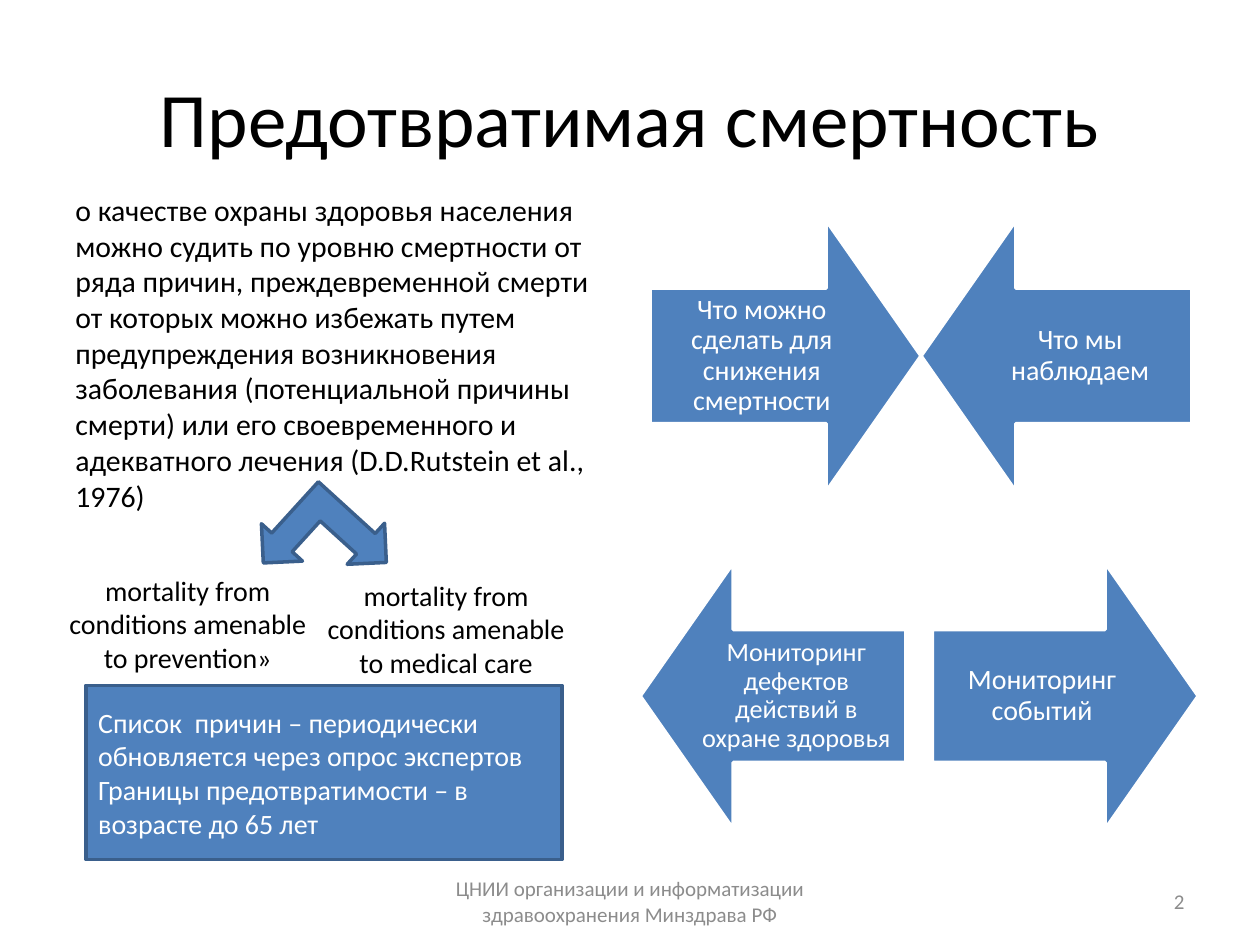
from pptx import Presentation
from pptx.dml.color import RGBColor
from pptx.enum.shapes import MSO_SHAPE as Shape
from pptx.enum.text import MSO_ANCHOR as Anchor, PP_ALIGN as Align
from pptx.util import Pt

COLORS = {
    "black": "000000",
    "white": "FFFFFF",
    "blue": "4F81BD",
    "outline": "3A5F8C",
    "gray": "8C8C8C",
}
FONT = "Calibri"
DEFINITION = (
    "о качестве охраны здоровья населения можно судить по уровню смертности "
    "от ряда причин, преждевременной смерти от которых можно избежать путем "
    "предупреждения возникновения заболевания (потенциальной причины смерти) "
    "или его своевременного и адекватного лечения (D.D.Rutstein et al., 1976)"
)


def color(name):
    return RGBColor.from_string(COLORS[name])


def write(box, text, size, ink="black", align=Align.LEFT, anchor=Anchor.TOP):
    frame = box.text_frame
    frame.text = text
    frame.word_wrap = True
    frame.vertical_anchor = anchor
    for para in frame.paragraphs:
        para.alignment = align
        for span in para.runs:
            span.font.name = FONT
            span.font.size = Pt(size)
            span.font.color.rgb = color(ink)


def add_title(page, text):
    title = page.shapes.title
    title.left, title.top, title.width, title.height = Pt(36), Pt(21.6), Pt(648), Pt(90)
    write(title, text, 44, align=Align.CENTER, anchor=Anchor.MIDDLE)


def add_text(page, bounds, text, size, **style):
    box = page.shapes.add_textbox(*map(Pt, bounds))
    write(box, text, size, **style)


def add_block(page, kind, bounds, outline="outline"):
    block = page.shapes.add_shape(kind, *map(Pt, bounds))
    block.shadow.inherit = False
    block.fill.solid()
    block.fill.fore_color.rgb = color("blue")
    block.line.color.rgb = color(outline)
    block.line.width = Pt(2)
    return block


def add_arrow(page, kind, left, top, side, text, size):
    arrow = add_block(page, kind, (left, top, side, side), "white")
    arrow.adjustments[0] = 0.5
    arrow.adjustments[1] = 0.35
    write(arrow, text, size, "white", Align.CENTER, Anchor.MIDDLE)
    frame = arrow.text_frame
    frame.margin_left = frame.margin_right = Pt(8)
    frame.margin_top = frame.margin_bottom = Pt(8)
    frame.paragraphs[0].line_spacing = 0.9


def main():
    deck = Presentation()
    deck.slide_width, deck.slide_height = Pt(720), Pt(540)
    page = deck.slides.add_slide(deck.slide_layouts[5])

    add_title(page, "Предотвратимая смертность")
    add_text(page, (36, 106, 318, 385), DEFINITION, 17)

    for kind, left, top, side, text, size in (
        (Shape.RIGHT_ARROW, 371.5, 126, 154.8, "Что можно сделать для снижения смертности", 16),
        (Shape.LEFT_ARROW, 526.3, 126, 154.8, "Что мы наблюдаем", 16),
        (Shape.LEFT_ARROW, 365.8, 321.8, 151.9, "Мониторинг дефектов действий в охране здоровья", 15),
        (Shape.RIGHT_ARROW, 532.8, 321.8, 151.9, "Мониторинг событий", 16),
    ):
        add_arrow(page, kind, left, top, side, text, size)

    fork = add_block(page, Shape.LEFT_UP_ARROW, (151.2, 278.6, 67.7, 63.4))
    fork.rotation = 222.3

    for left, top, purpose in ((25.2, 324, "prevention»"), (172.8, 326.9, "medical care")):
        add_text(page, (left, top, 164.2, 65.5),
                 f"mortality from conditions amenable to {purpose}", 16, align=Align.CENTER)

    footer = {"ink": "gray", "anchor": Anchor.MIDDLE}
    add_text(page, (246, 500.5, 228, 28.8),
             "ЦНИИ организации и информатизации здравоохранения Минздрава РФ",
             12, align=Align.CENTER, **footer)
    add_text(page, (516, 500.5, 168, 28.8), "2", 12, align=Align.RIGHT, **footer)

    causes = add_block(page, Shape.RECTANGLE, (49, 391.7, 272.2, 99.4))
    write(causes,
          "Список  причин – периодически обновляется через опрос экспертов\n"
          "Границы предотвратимости – в возрасте до 65 лет",
          16, "white", anchor=Anchor.MIDDLE)

    deck.save("out.pptx")


if __name__ == "__main__":
    main()
